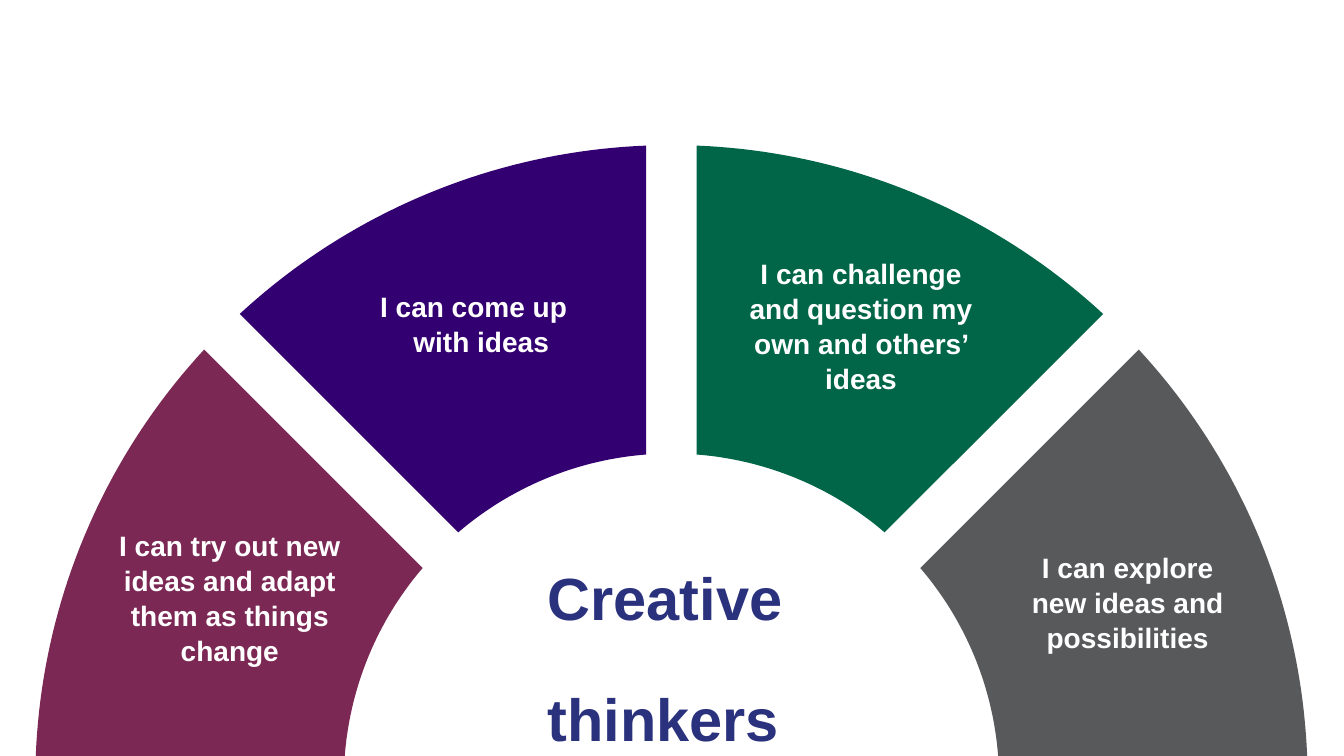
from math import asin, cos, pi, sin

from pptx import Presentation
from pptx import util as u
from pptx.dml.color import RGBColor
from pptx.enum import text

CENTRE = (6.66, 7.75)
OUTER, INNER = 6.31, 3.25
HALF_GAP = 0.25
STEPS = 40

# Sectors from left to right
SECTOR_COLOURS = ["7C2854", "330072", "006647", "58595B"]

LABEL = dict(size=u.Pt(20), bold=True, name="Arial")
HEADING = dict(size=u.Pt(42.5), bold=True, name="Arial")


def paint(target, colour):
    target.rgb = RGBColor.from_string(colour)


def arc(radius, start, end):
    """Points from one spoke to the next, each set in by half a gap."""
    inset = asin(HALF_GAP / radius)
    first, last = start + inset, end - inset
    angles = [first + (last - first) * i / STEPS for i in range(STEPS + 1)]
    return [(u.Inches(CENTRE[0] - radius * cos(a)),
             u.Inches(CENTRE[1] - radius * sin(a))) for a in angles]


def add_sector(page, index, colour):
    start, end = index * pi / 4, (index + 1) * pi / 4
    points = arc(OUTER, start, end) + arc(INNER, start, end)[::-1]
    builder = page.shapes.build_freeform(*points[0])
    builder.add_line_segments(points[1:], close=True)
    sector = builder.convert_to_shape()
    sector.shadow.inherit = False
    sector.fill.solid()
    paint(sector.fill.fore_color, colour)
    sector.line.fill.background()


def fill_text(shape, place, lines, style, colour, top=0.01, **layout):
    """Place a text shape and write one paragraph for each line."""
    shape.left, shape.top, shape.width, shape.height = map(u.Inches, place)
    frame = shape.text_frame
    frame.word_wrap = True
    frame.auto_size = text.MSO_AUTO_SIZE.NONE
    frame.vertical_anchor = text.MSO_ANCHOR.TOP
    frame.margin_left = frame.margin_right = frame.margin_bottom = 0
    frame.margin_top = u.Inches(top)
    frame.text = "\n".join(lines)
    for para in frame.paragraphs:
        for key, value in layout.items():
            setattr(para, key, value)
        for span in para.runs:
            for key, value in style.items():
                setattr(span.font, key, value)
            paint(span.font.color, colour)
    return frame


def add_text(page, place, *args, **layout):
    box = page.shapes.add_textbox(*map(u.Inches, place))
    return fill_text(box, place, *args, **layout)


def add_heading(page, place):
    frame = add_text(page, place, ["Creative", "thinkers"], HEADING, "2A317D",
                     top=0.13, line_spacing=u.Pt(43))
    frame.paragraphs[1].space_before = u.Pt(43)


def add_labels(page):
    centred = dict(alignment=text.PP_ALIGN.CENTER, line_spacing=1.04)
    add_text(page, (10.22, 5.44, 1.93, 1.03),
             ["I can explore new ideas and possibilities"],
             LABEL, "FFFFFF", **centred)
    add_text(page, (1.15, 5.22, 2.26, 1.36),
             ["I can try out new ideas and adapt them as things change"],
             LABEL, "FFFFFF", **centred)

    # The second line of this label hangs to the right of the first
    frame = add_text(page, (3.75, 2.85, 1.95, 0.69),
                     ["I can come up with ideas"],
                     LABEL, "FFFFFF", line_spacing=1.04)
    indents = frame.paragraphs[0]._p.get_or_add_pPr()
    indents.set("marL", str(u.Inches(0.35)))
    indents.set("indent", str(u.Inches(-0.33)))

    # The title sits on top of its sector
    title = page.shapes.title
    fill_text(title, (7.42, 2.52, 2.24, 1.36),
              ["I can challenge and question my own and others’ ideas"],
              LABEL, "FFFFFF", **centred)
    title._element.getparent().append(title._element)


def main():
    deck = Presentation()
    deck.slide_width, deck.slide_height = u.Inches(13.33), u.Inches(7.5)
    page = deck.slides.add_slide(deck.slide_layouts[5])
    for index, colour in enumerate(SECTOR_COLOURS):
        add_sector(page, index, colour)
    add_heading(page, (5.43, 5.55, 2.36, 1.34))
    add_labels(page)
    deck.save("out.pptx")


if __name__ == "__main__":
    main()
